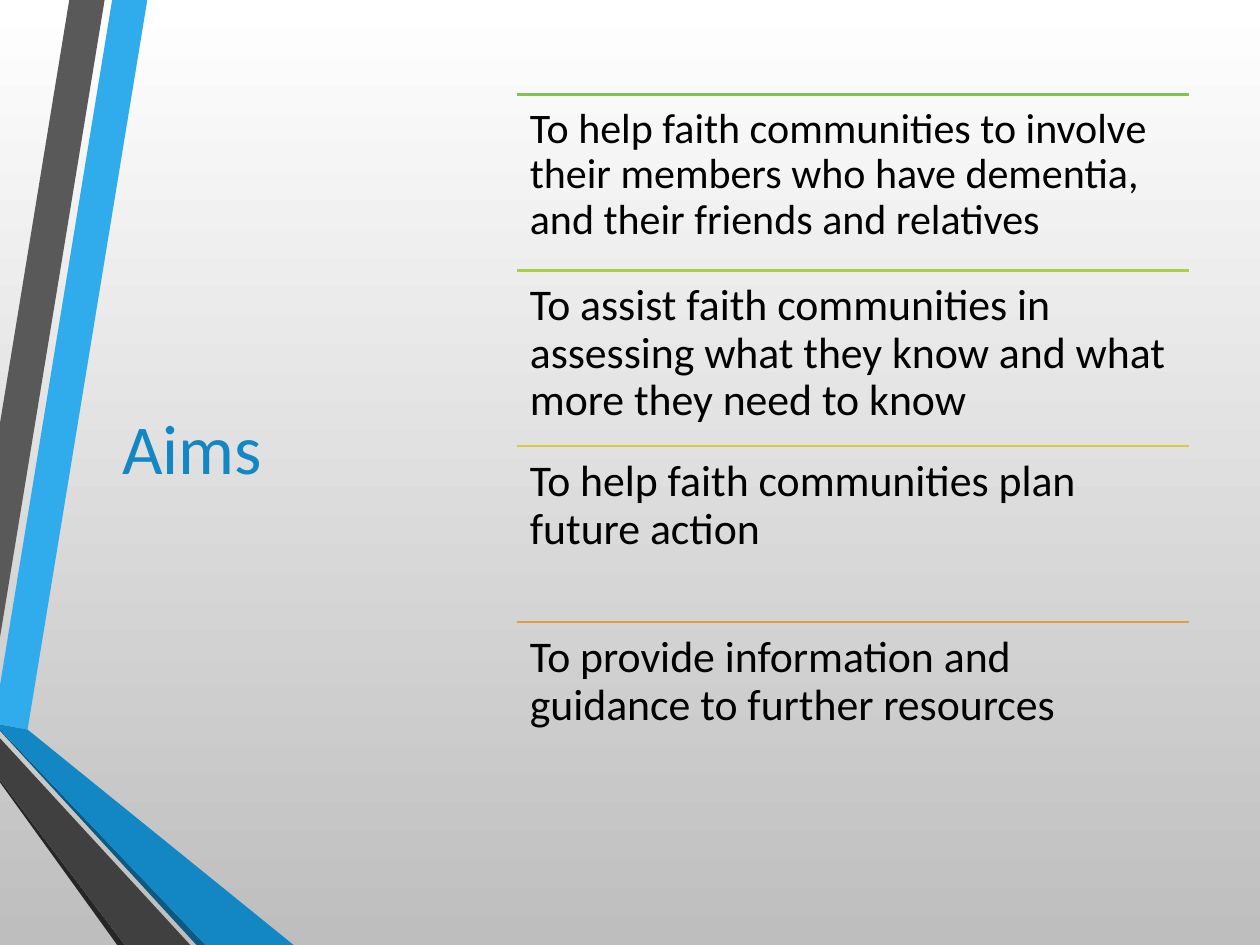
from lxml import etree
from pptx import Presentation
from pptx import util as u
from pptx.dml.color import RGBColor
from pptx.enum import shapes, text
from pptx.oxml.ns import qn

FONT = "Calibri"
BANDS = [
    ("30ACEC", [(0, 391.7), (0, 414), (15.8, 416.9), (84.2, 0), (64.1, 0)]),
    ("595959", [(59.8, 0), (39.6, 0), (0, 241.9), (0, 364.3)]),
    ("262626", [(0, 445.7), (0, 447.1), (67, 540), (71.3, 540)]),
    ("0C5A82", [(0, 416.9), (0, 417.6), (112.3, 540), (117.4, 540)]),
    ("1287C3", [(0, 416.9), (117.4, 540), (167.8, 540), (15.8, 416.9), (0, 414)]),
    ("404040", [(0, 445.7), (71.3, 540), (108.7, 540), (0, 421.9)]),
]
AIMS = [
    ("80C34F", 24, "To help faith communities to involve their members "
                   "who have dementia, and their friends and relatives"),
    ("ADCE49", 25, "To assist faith communities in assessing what they know "
                   "and what more they need to know"),
    ("D8CB43", 25, "To help faith communities plan future action"),
    ("E29D3E", 25, "To provide information and guidance to further resources"),
]
LEFT, TOP, WIDTH, STEP = 295.7, 54, 383.5, 100.55


def color(code):
    """Turn a hex string into a colour."""
    return RGBColor.from_string(code)


def shade(slide):
    """Fill the background with a vertical grey gradient."""
    fill = slide.background.fill
    fill.gradient()
    fill.gradient_angle = 270
    for stop, code, place in zip(fill.gradient_stops, ("FFFFFF", "BEBEBE"), (0, 1)):
        stop.color.rgb = color(code)
        stop.position = place


def band(slide, code, points):
    """Draw one closed, filled outline."""
    first, *rest = [(u.Pt(x), u.Pt(y)) for x, y in points]
    pen = slide.shapes.build_freeform(*first)
    pen.add_line_segments(rest, close=True)
    shape = pen.convert_to_shape()
    shape.shadow.inherit = False
    shape.fill.solid()
    shape.fill.fore_color.rgb = color(code)
    shape.line.fill.background()


def rule(slide, y, code):
    """Draw a horizontal rule above an aim."""
    line = slide.shapes.add_connector(
        shapes.MSO_CONNECTOR.STRAIGHT,
        u.Pt(LEFT), u.Pt(y), u.Pt(LEFT + WIDTH), u.Pt(y))
    line.line.color.rgb = color(code)
    line.line.width = u.Pt(1.25)
    etree.SubElement(line._element.spPr, qn("a:effectLst"))


def label(slide, box, words, size, code):
    """Add a wrapped text box and return its frame."""
    frame = slide.shapes.add_textbox(*map(u.Pt, box)).text_frame
    frame.word_wrap = True
    run = frame.paragraphs[0].add_run()
    run.text = words
    run.font.name = FONT
    run.font.size = u.Pt(size)
    run.font.color.rgb = color(code)
    return frame


def title(slide):
    """Add the centred heading."""
    frame = label(slide, (31.7, 54, 156.2, 401.8), "Aims", 40, "1287C3")
    frame.vertical_anchor = text.MSO_ANCHOR.MIDDLE
    frame.paragraphs[0].alignment = text.PP_ALIGN.CENTER


def aim(slide, y, code, size, words):
    """Add one aim below its rule."""
    rule(slide, y, code)
    frame = label(slide, (LEFT, y, WIDTH, STEP), words, size, "000000")
    frame.margin_left = frame.margin_right = u.Pt(7.2)
    frame.margin_top = frame.margin_bottom = u.Pt(7.2)
    frame.paragraphs[0].line_spacing = 0.9


def main():
    """Build and save the slide."""
    deck = Presentation()
    deck.slide_width, deck.slide_height = u.Pt(720), u.Pt(540)
    slide = deck.slides.add_slide(deck.slide_layouts[6])
    shade(slide)
    for code, points in BANDS:
        band(slide, code, points)
    title(slide)
    for i, (code, size, words) in enumerate(AIMS):
        aim(slide, TOP + i * STEP, code, size, words)
    deck.save("out.pptx")


if __name__ == "__main__":
    main()
